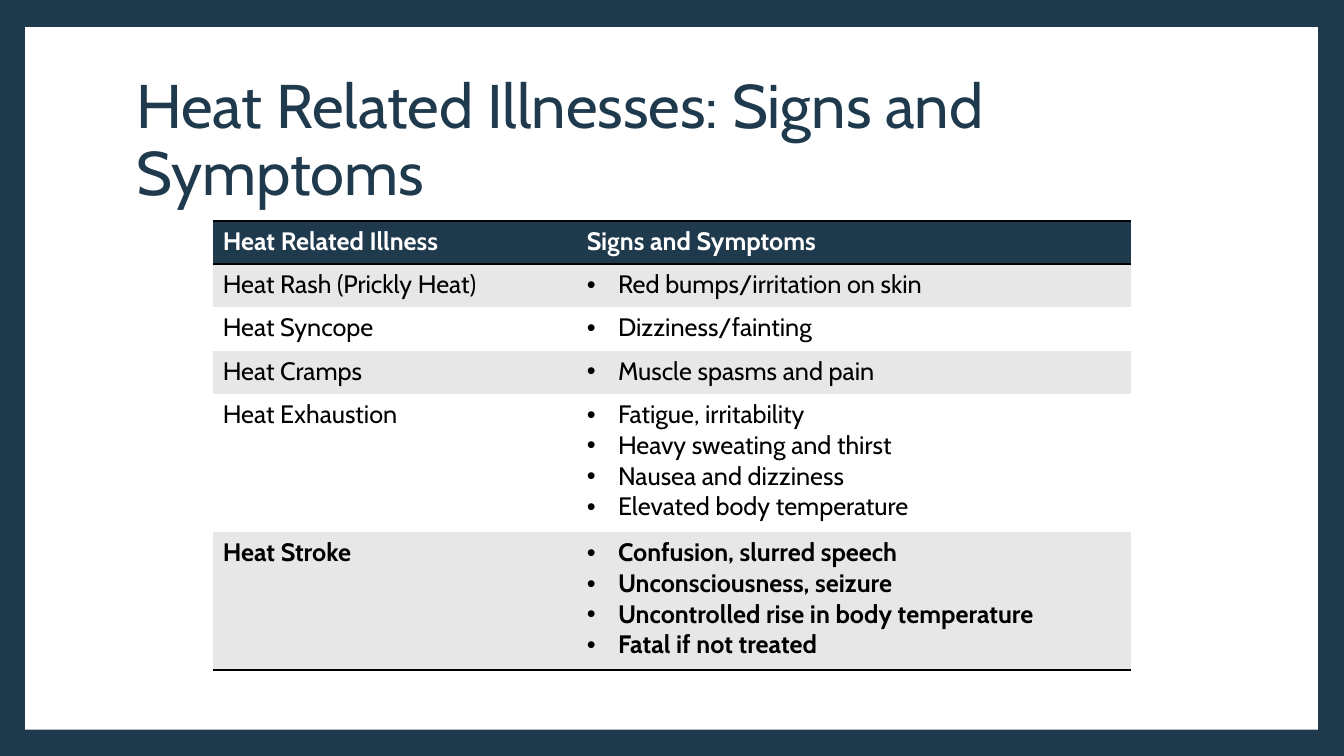
from lxml import etree
from pptx import Presentation
from pptx.dml.color import RGBColor
from pptx.enum.shapes import MSO_SHAPE
from pptx.enum.text import MSO_ANCHOR, PP_ALIGN
from pptx.oxml.ns import qn
from pptx.util import Inches, Pt

RECTANGLE = MSO_SHAPE.RECTANGLE
MIDDLE = MSO_ANCHOR.MIDDLE
LEFT = PP_ALIGN.LEFT
FONT = "Cabin"
NAVY, WHITE, BLACK, GREY = "1F394D", "FFFFFF", "000000", "E7E7E7"
PLAIN_TABLE_STYLE = "{2D5ABB26-0587-4C30-8999-92F81FD0307C}"
TITLE_LAYOUT = 5

TITLE = "Heat Related Illnesses: Signs and Symptoms"
HEADINGS = ("Heat Related Illness", "Signs and Symptoms")
ILLNESSES = [
    ("Heat Rash (Prickly Heat)", ["Red bumps/irritation on skin"]),
    ("Heat Syncope", ["Dizziness/fainting"]),
    ("Heat Cramps", ["Muscle spasms and pain"]),
    ("Heat Exhaustion", [
        "Fatigue, irritability",
        "Heavy sweating and thirst",
        "Nausea and dizziness",
        "Elevated body temperature",
    ]),
    ("Heat Stroke", [
        "Confusion, slurred speech",
        "Unconsciousness, seizure",
        "Uncontrolled rise in body temperature",
        "Fatal if not treated",
    ]),
]
COLUMN_WIDTHS = (3.61, 5.5)
SHORT_ROW, TALL_ROW = 0.43, 1.37


def rgb(color):
    """Return the colour for a hex string."""
    return RGBColor.from_string(color)


def format_font(font, size, color, bold=False):
    """Set typeface, size, colour and weight."""
    font.name = FONT
    font.size = Pt(size)
    font.bold = bold
    font.color.rgb = rgb(color)


def add_background(slide):
    """Fill the slide with navy and lay the white panel on it."""
    slide.background.fill.solid()
    slide.background.fill.fore_color.rgb = rgb(NAVY)
    panel = slide.shapes.add_shape(
        RECTANGLE, Inches(0.25), Inches(0.27), Inches(12.82), Inches(6.97))
    panel.shadow.inherit = False
    panel.fill.solid()
    panel.fill.fore_color.rgb = rgb(WHITE)
    panel.line.fill.background()
    slide.shapes._spTree.insert(2, panel._element)


def format_title(slide):
    """Place and format the title placeholder."""
    title = slide.shapes.title
    title.left, title.top = Inches(1.25), Inches(0.67)
    title.width, title.height = Inches(11.42), Inches(1.48)
    text_frame = title.text_frame
    text_frame.text = TITLE
    text_frame.word_wrap = True
    text_frame.vertical_anchor = MIDDLE
    paragraph = text_frame.paragraphs[0]
    paragraph.alignment = LEFT
    paragraph.line_spacing = 0.9
    format_font(paragraph.runs[0].font, 44, NAVY)


def add_bullet(paragraph):
    """Give a paragraph a hanging round bullet."""
    properties = paragraph._p.get_or_add_pPr()
    properties.set("marL", str(Inches(0.31)))
    properties.set("indent", str(Inches(-0.31)))
    etree.SubElement(properties, qn("a:buFont"), typeface="Arial")
    etree.SubElement(properties, qn("a:buChar"), char="•")


def add_borders(cell, sides):
    """Draw black two-point borders on the given sides, top before bottom."""
    properties = cell._tc.get_or_add_tcPr()
    for position, side in enumerate(sides):
        line = etree.Element(qn(f"a:ln{side}"), w=str(Pt(2)))
        fill = etree.SubElement(line, qn("a:solidFill"))
        etree.SubElement(fill, qn("a:srgbClr"), val=BLACK)
        properties.insert(position, line)


def fill_cell(cell, lines, fill, color, bold, bulleted):
    """Write the lines into a cell and format them."""
    cell.fill.solid()
    cell.fill.fore_color.rgb = rgb(fill)
    cell.text_frame.text = "\n".join(lines)
    for paragraph in cell.text_frame.paragraphs:
        if bulleted:
            add_bullet(paragraph)
        format_font(paragraph.runs[0].font, 18, color, bold)


def add_illness_table(slide):
    """Add the table of illnesses and their symptoms."""
    heights = [SHORT_ROW] + [
        TALL_ROW if len(symptoms) > 1 else SHORT_ROW for _, symptoms in ILLNESSES]
    table = slide.shapes.add_table(
        len(heights), len(COLUMN_WIDTHS), Inches(2.11), Inches(2.19),
        Inches(sum(COLUMN_WIDTHS)), Inches(sum(heights))).table
    table._tbl.tblPr.find(qn("a:tableStyleId")).text = PLAIN_TABLE_STYLE
    for column, width in zip(table.columns, COLUMN_WIDTHS):
        column.width = Inches(width)
    for row, height in zip(table.rows, heights):
        row.height = Inches(height)

    for index, heading in enumerate(HEADINGS):
        fill_cell(table.cell(0, index), [heading], NAVY, WHITE, True, False)
        add_borders(table.cell(0, index), "TB")
    last = len(ILLNESSES)
    for index, (illness, symptoms) in enumerate(ILLNESSES, start=1):
        fill = GREY if index % 2 else WHITE
        bold = index == last
        fill_cell(table.cell(index, 0), [illness], fill, BLACK, bold, False)
        fill_cell(table.cell(index, 1), symptoms, fill, BLACK, bold, True)
    for cell in table.rows[last].cells:
        add_borders(cell, "B")


def main():
    """Build and save the slide."""
    presentation = Presentation()
    presentation.slide_width = Inches(13.33)
    presentation.slide_height = Inches(7.5)
    slide = presentation.slides.add_slide(presentation.slide_layouts[TITLE_LAYOUT])
    add_background(slide)
    format_title(slide)
    add_illness_table(slide)
    presentation.save("out.pptx")


if __name__ == "__main__":
    main()
